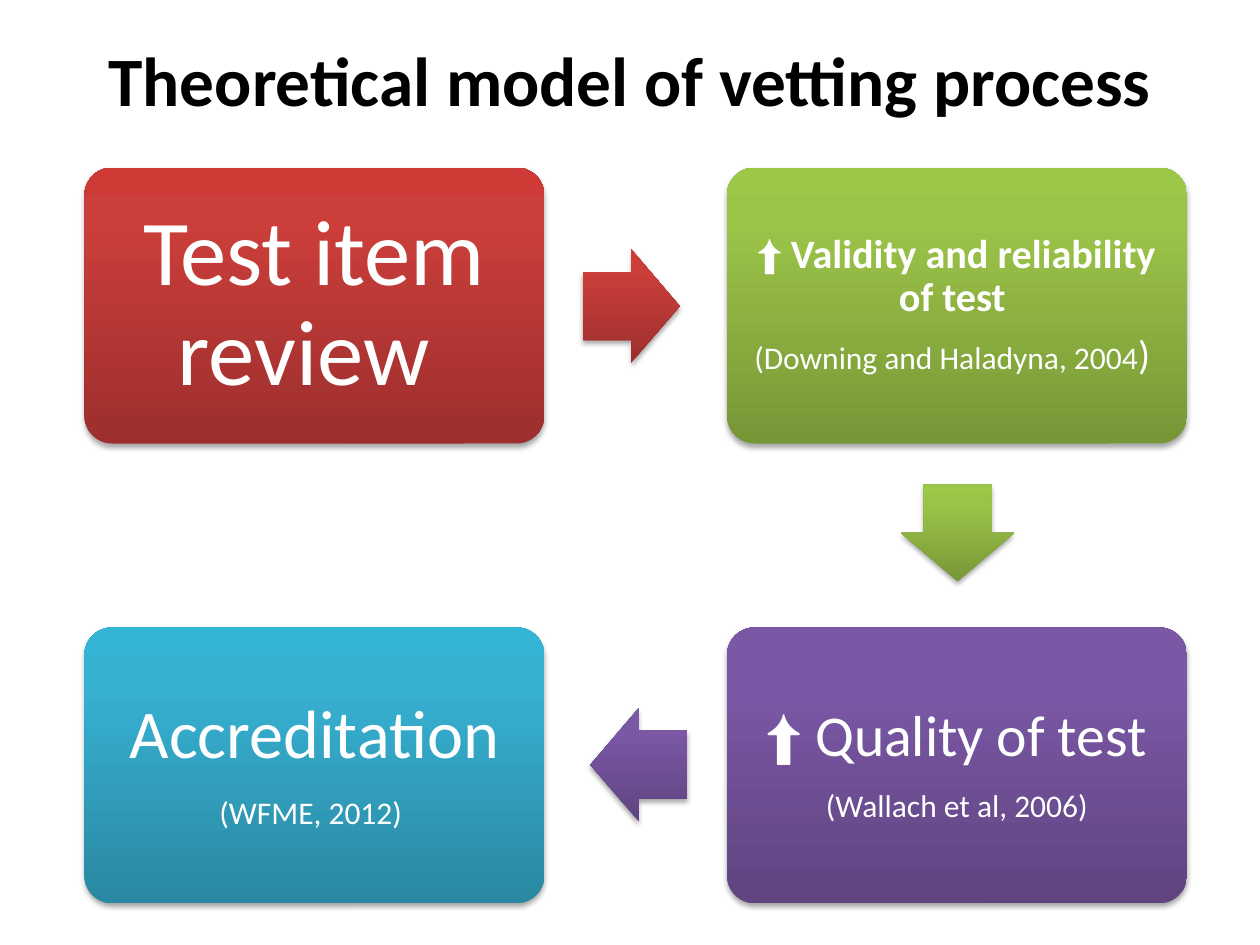
from lxml import etree
from pptx import Presentation
from pptx.dml.color import RGBColor
from pptx.enum.shapes import MSO_SHAPE as SHAPE
from pptx.enum.text import MSO_ANCHOR as ANCHOR, PP_ALIGN as ALIGN
from pptx.oxml import parse_xml
from pptx.oxml.ns import qn
from pptx.util import Inches, Pt

NAMESPACE = "http://schemas.openxmlformats.org/drawingml/2006/main"
LEFT, TOP = 0.67, 1.33
CARD_WIDTH, CARD_HEIGHT = 3.65, 2.19
COLUMN_STEP, ROW_STEP = 5.1, 3.65
ARROW_LENGTH, ARROW_BREADTH = 0.77, 0.9

RED = ("9C2F2D", "CB3E3A", "CE3B37")
GREEN = ("779737", "9BC348", "9DC746")
PURPLE = ("5F4480", "7B58A6", "7C57A8")
BLUE = ("2A88A2", "37B1D2", "34B4D6")

CARDS = [
    (0, 0, RED, 0.16, [[("Test item review ", 53, False)]]),
    (1, 0, GREEN, 0.04, [
        [("⬆ ", 23, False), ("Validity and reliability of test ", 23, True)],
        [("(Downing and Haladyna, 2004", 18, False), (") ", 23, False)],
    ]),
    (1, 1, PURPLE, 0.08, [
        [("⬆ Quality of test", 33, False)],
        [("(Wallach et al, 2006)", 18, False)],
    ]),
    (0, 1, BLUE, 0.1, [
        [("Accreditation", 39, False)],
        [("(WFME, 2012) ", 18, False)],
    ]),
]
ARROWS = [(5.01, 2.43, 0, RED), (7.6, 4.23, 90, GREEN), (5.07, 6.07, 180, PURPLE)]


def color(value):
    return RGBColor.from_string(value)


def add_text(paragraph, text, size, bold=False, fill="FFFFFF"):
    run = paragraph.add_run()
    run.text = text
    run.font.name = "Calibri"
    run.font.size = Pt(size)
    run.font.bold = bold
    run.font.color.rgb = color(fill)


def add_glossy_shape(slide, kind, box, stops, adjustments):
    shape = slide.shapes.add_shape(kind, *map(Inches, box))
    for index, value in enumerate(adjustments):
        shape.adjustments[index] = value
    shape.line.fill.background()
    shape.fill.gradient()
    gradient = shape.element.spPr.find(qn("a:gradFill"))
    stop_xml = "".join(
        f'<a:gs pos="{position * 1000}"><a:srgbClr val="{value}"/></a:gs>'
        for position, value in zip((0, 80, 100), stops)
    )
    gradient.getparent().replace(gradient, parse_xml(
        f'<a:gradFill xmlns:a="{NAMESPACE}" rotWithShape="0"><a:gsLst>{stop_xml}</a:gsLst>'
        '<a:lin ang="16200000" scaled="0"/></a:gradFill>'
    ))
    shape.shadow.inherit = False
    effects = shape.element.spPr.find(qn("a:effectLst"))
    shadow = etree.SubElement(
        effects, qn("a:outerShdw"), blurRad=str(Pt(3.1)), dist=str(Pt(1.8)),
        dir="5400000", rotWithShape="0",
    )
    black = etree.SubElement(shadow, qn("a:srgbClr"), val="000000")
    etree.SubElement(black, qn("a:alpha"), val="35000")
    return shape


def add_card(slide, box, stops, inset, paragraphs):
    shape = add_glossy_shape(slide, SHAPE.ROUNDED_RECTANGLE, box, stops, [0.1])
    frame = shape.text_frame
    frame.word_wrap = True
    frame.vertical_anchor = ANCHOR.MIDDLE
    frame.margin_left = frame.margin_right = Inches(inset)
    frame.margin_top = frame.margin_bottom = Inches(inset)
    for index, runs in enumerate(paragraphs):
        paragraph = frame.add_paragraph() if index else frame.paragraphs[0]
        paragraph.alignment = ALIGN.CENTER
        paragraph.line_spacing = 0.9
        paragraph.space_after = Pt(round(0.35 * runs[0][1]))
        for text, size, bold in runs:
            add_text(paragraph, text, size, bold=bold)


def add_arrow(slide, center_x, center_y, rotation, stops):
    box = (center_x - ARROW_LENGTH / 2, center_y - ARROW_BREADTH / 2,
           ARROW_LENGTH, ARROW_BREADTH)
    arrow = add_glossy_shape(slide, SHAPE.RIGHT_ARROW, box, stops, [0.6, 0.5])
    arrow.rotation = rotation


def add_title(slide, box):
    title = slide.shapes.title
    title.left, title.top, title.width, title.height = map(Inches, box)
    title.text_frame.vertical_anchor = ANCHOR.MIDDLE
    paragraph = title.text_frame.paragraphs[0]
    paragraph.alignment = ALIGN.CENTER
    add_text(paragraph, "Theoretical model of vetting process", 39.6, bold=True, fill="000000")


def main():
    presentation = Presentation()
    presentation.slide_width, presentation.slide_height = Inches(10), Inches(7.5)
    slide = presentation.slides.add_slide(presentation.slide_layouts[5])
    add_title(slide, (0.5, 0, 9, 1.25))
    for column, row, stops, inset, paragraphs in CARDS:
        box = (LEFT + column * COLUMN_STEP, TOP + row * ROW_STEP, CARD_WIDTH, CARD_HEIGHT)
        add_card(slide, box, stops, inset, paragraphs)
    for arrow in ARROWS:
        add_arrow(slide, *arrow)
    presentation.save("out.pptx")


if __name__ == "__main__":
    main()
